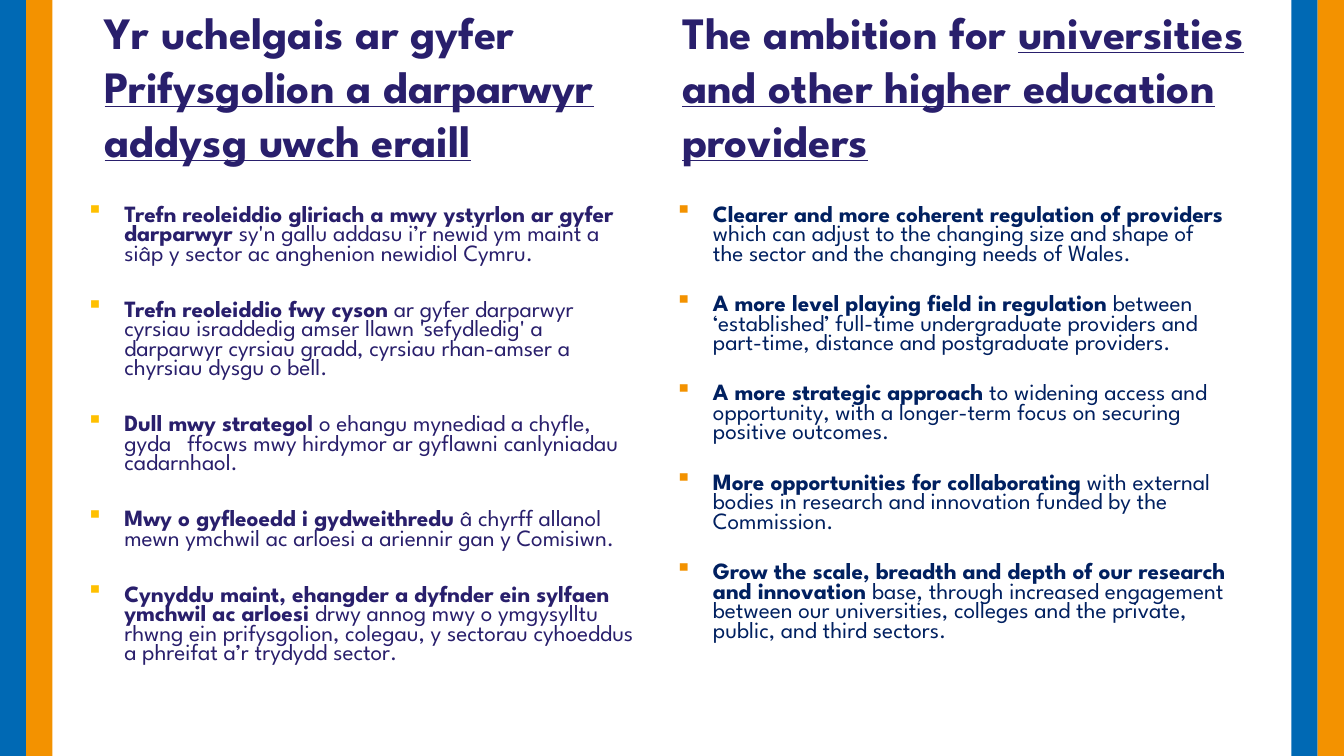
import pptx
import pptx.dml.color
import pptx.enum.shapes
import pptx.enum.text
import pptx.oxml.ns
import pptx.util
import lxml.etree

COLORS = {"blue": "0069B4", "orange": "F39200", "amber": "FFC000",
          "purple": "291F6C", "navy": "002060"}
PAGE_WIDTH, PAGE_HEIGHT = 960, 540
BAR_WIDTH = 18.75
BODY_TOP, BODY_WIDTH, BODY_HEIGHT = 144, 408.25, 390

# Each heading is a plain part followed by an underlined part.
HEADINGS = [
    ((67.7, 399.6, 152.6), "Yr uchelgais ar gyfer ",
     "Prifysgolion a darparwyr addysg uwch eraill"),
    ((480.25, 452.9, 123.85), "The ambition for ",
     "universities and other higher education providers"),
]

# Each point is a bold part followed by a regular part.
WELSH_POINTS = [
    ("Trefn reoleiddio gliriach a mwy ystyrlon ar gyfer darparwyr ",
     "sy'n gallu addasu i’r newid ym maint a siâp y sector ac anghenion "
     "newidiol Cymru."),
    ("Trefn reoleiddio fwy cyson ",
     "ar gyfer darparwyr cyrsiau israddedig amser llawn 'sefydledig' a "
     "darparwyr cyrsiau gradd, cyrsiau rhan-amser a chyrsiau dysgu o bell."),
    ("Dull mwy strategol ",
     "o ehangu mynediad a chyfle, gyda \tffocws mwy hirdymor ar gyflawni "
     "canlyniadau cadarnhaol."),
    ("Mwy o gyfleoedd i gydweithredu ",
     "â chyrff allanol mewn ymchwil ac arloesi a ariennir gan y Comisiwn."),
    ("Cynyddu maint, ehangder a dyfnder ein sylfaen ymchwil ac arloesi ",
     "drwy annog mwy o ymgysylltu rhwng ein prifysgolion, colegau, y sectorau "
     "cyhoeddus a phreifat a’r trydydd sector."),
]
ENGLISH_POINTS = [
    ("Clearer and more coherent regulation of providers ",
     "which can adjust to the changing size and shape of the sector and the "
     "changing needs of Wales."),
    ("A more level playing field in regulation ",
     "between ‘established’ full-time undergraduate providers and part-time, "
     "distance and postgraduate providers."),
    ("A more strategic approach ",
     "to widening access and opportunity, with a longer-term focus on "
     "securing positive outcomes."),
    ("More opportunities for collaborating ",
     "with external bodies in research and innovation funded by the "
     "Commission."),
    ("Grow the scale, breadth and depth of our research and innovation ",
     "base, through increased engagement between our universities, colleges "
     "and the private, public, and third sectors."),
]


class SlideBuilder:
    """Holds the text style and the page being filled."""

    font_name = "League Spartan"
    heading_size = 32
    body_size = 16.6
    indent = 27

    def __init__(self, page):
        self.page = page

    def color(self, name):
        return pptx.dml.color.RGBColor.from_string(COLORS[name])

    def text_frame(self, left, top, width, height):
        box = self.page.shapes.add_textbox(
            *map(pptx.util.Pt, (left, top, width, height)))
        box.text_frame.word_wrap = True
        box.text_frame.vertical_anchor = pptx.enum.text.MSO_ANCHOR.TOP
        return box.text_frame

    def span(self, para, text, size, color, **extra):
        span = para.add_run()
        span.text = text
        formats = {"name": self.font_name, "size": pptx.util.Pt(size), **extra}
        for key, value in formats.items():
            setattr(span.font, key, value)
        span.font.color.rgb = self.color(color)

    def bullet(self, para, color):
        properties = para._p.get_or_add_pPr()
        properties.set("marL", str(pptx.util.Pt(self.indent)))
        properties.set("indent", str(-pptx.util.Pt(self.indent)))
        name = pptx.oxml.ns.qn
        tint = lxml.etree.SubElement(properties, name("a:buClr"))
        lxml.etree.SubElement(tint, name("a:srgbClr"), val=COLORS[color])
        lxml.etree.SubElement(properties, name("a:buChar"), char="▪")

    def heading(self, left, width, height, plain, underlined):
        para = self.text_frame(left, 0, width, height).paragraphs[0]
        for text, underline in ((plain, False), (underlined, True)):
            self.span(para, text, self.heading_size, "purple",
                      bold=True, underline=underline)

    def bullet_list(self, left, points, color, bullet_color, before, after):
        frame = self.text_frame(left, BODY_TOP, BODY_WIDTH, BODY_HEIGHT)
        formats = {"line_spacing": 0.7,
                   "space_before": pptx.util.Pt(before),
                   "space_after": pptx.util.Pt(after)}
        for index, (lead, rest) in enumerate(points):
            para = frame.add_paragraph() if index else frame.paragraphs[0]
            for key, value in formats.items():
                setattr(para, key, value)
            self.bullet(para, bullet_color)
            self.span(para, lead, self.body_size, color, bold=True)
            self.span(para, rest, self.body_size, color, bold=False)

    def bar(self, left, color):
        bar = self.page.shapes.add_shape(
            pptx.enum.shapes.MSO_SHAPE.RECTANGLE,
            *map(pptx.util.Pt, (left, 0, BAR_WIDTH, PAGE_HEIGHT)))
        bar.shadow.inherit = False
        bar.fill.solid()
        bar.fill.fore_color.rgb = self.color(color)
        bar.line.fill.background()


def main():
    deck = pptx.Presentation()
    deck.slide_width = pptx.util.Pt(PAGE_WIDTH)
    deck.slide_height = pptx.util.Pt(PAGE_HEIGHT)
    builder = SlideBuilder(deck.slides.add_slide(deck.slide_layouts[6]))

    # Headings
    for place, plain, underlined in HEADINGS:
        builder.heading(*place, plain, underlined)

    # Welsh and English points
    builder.bullet_list(54.7, WELSH_POINTS, "purple", "amber", 6, 20)
    builder.bullet_list(475.2, ENGLISH_POINTS, "navy", "orange", 10, 12)

    # Blue and orange bars along both edges
    for start in (0, PAGE_WIDTH - 2 * BAR_WIDTH):
        for index, color in enumerate(("blue", "orange")):
            builder.bar(start + index * BAR_WIDTH, color)

    deck.save("out.pptx")


if __name__ == "__main__":
    main()
